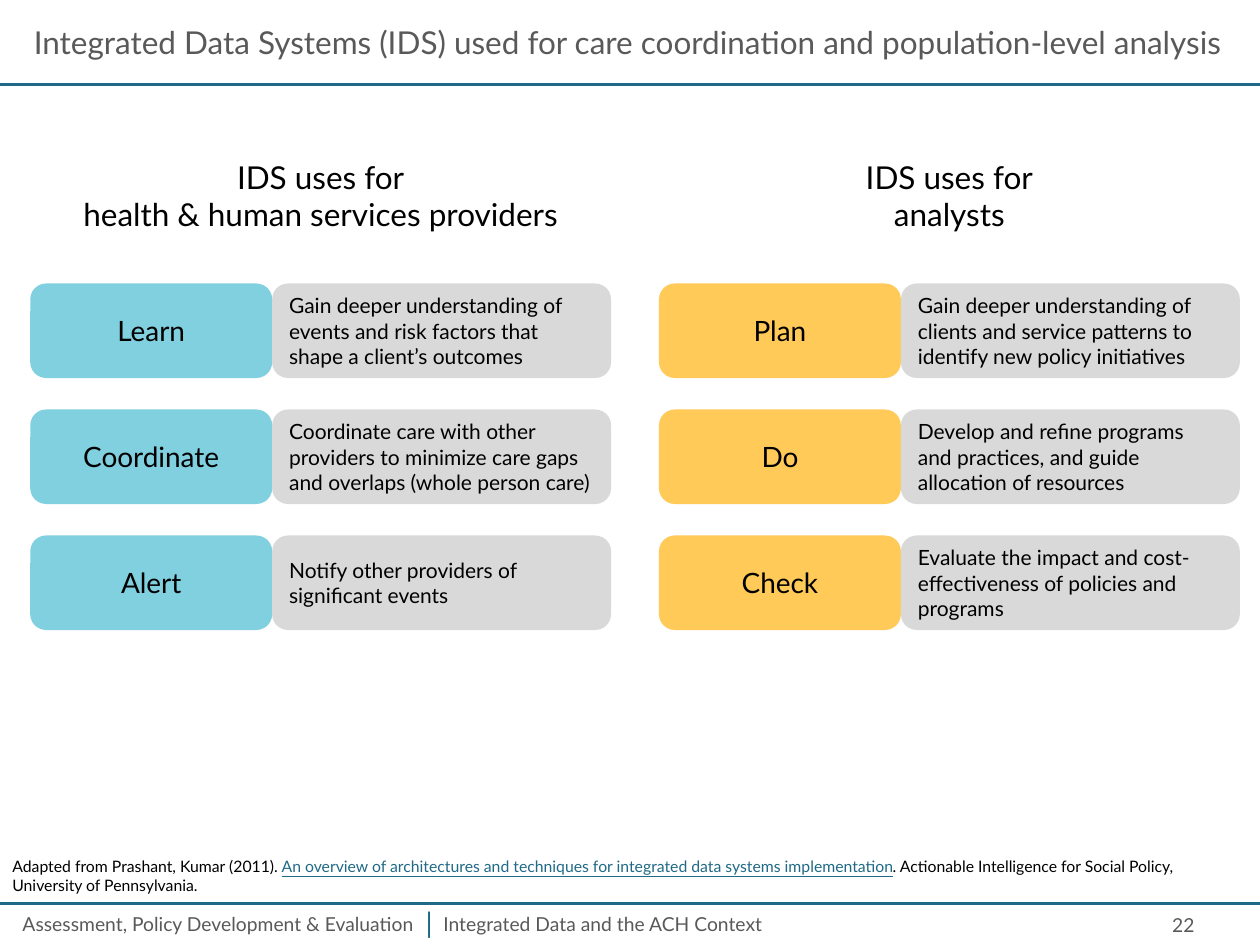
from dataclasses import dataclass

from lxml import etree
from pptx import Presentation
from pptx.dml.color import RGBColor
from pptx.enum import shapes, text
from pptx.oxml import ns
from pptx.util import Inches, Pt


@dataclass(frozen=True)
class Theme:
    font: str = "Lato"
    black: str = "000000"
    grey_text: str = "595959"
    accent: str = "206A87"
    provider: str = "80D0E0"
    analyst: str = "FFCA58"
    detail: str = "D9D9D9"
    heading_size: int = 18
    divider_size: int = 16
    label_size: int = 16
    detail_size: int = 12
    footer_size: int = 11
    source_size: int = 9
    rule_width: float = 1.5


@dataclass(frozen=True)
class Span:
    wording: str
    size: int
    color: str
    underline: bool = False


@dataclass(frozen=True)
class Use:
    label: str
    detail: str


@dataclass(frozen=True)
class Column:
    left: float
    color: str
    heading: tuple[str, ...]
    uses: tuple[Use, ...]


THEME = Theme()
LEFT, CENTER, RIGHT = text.PP_ALIGN.LEFT, text.PP_ALIGN.CENTER, text.PP_ALIGN.RIGHT
TOP, MIDDLE = text.MSO_ANCHOR.TOP, text.MSO_ANCHOR.MIDDLE

# Grid of the two columns, in inches
PAGE_WIDTH, PAGE_HEIGHT = 10, 7.5
HEADING_TOP, HEADING_WIDTH, HEADING_HEIGHT = 1.25, 4.61, 0.61
FIRST_ROW, ROW_STEP, ROW_HEIGHT = 2.25, 1, 0.75
LABEL_WIDTH, DETAIL_WIDTH = 1.92, 2.69

COLUMNS = (
    Column(0.24, THEME.provider, ("IDS uses for", "health & human services providers"), (
        Use("Learn", "Gain deeper understanding of events and risk factors that "
                     "shape a client’s outcomes"),
        Use("Coordinate", "Coordinate care with other providers to minimize care gaps "
                          "and overlaps (whole person care)"),
        Use("Alert", "Notify other providers of significant events"),
    )),
    Column(5.23, THEME.analyst, ("IDS uses for", "analysts"), (
        Use("Plan", "Gain deeper understanding of clients and service patterns to "
                    "identify new policy initiatives"),
        Use("Do", "Develop and refine programs and practices, and guide "
                  "allocation of resources"),
        Use("Check", "Evaluate the impact and cost-effectiveness of policies and programs"),
    )),
)


def write(frame, paragraphs: list[list[Span]], align, anchor) -> None:
    frame.word_wrap = True
    frame.vertical_anchor = anchor
    for index, spans in enumerate(paragraphs):
        para = frame.paragraphs[0] if index == 0 else frame.add_paragraph()
        para.alignment = align
        for span in spans:
            run = para.add_run()
            run.text = span.wording
            run.font.name = THEME.font
            run.font.size = Pt(span.size)
            run.font.color.rgb = RGBColor.from_string(span.color)
            if span.underline:
                run.font.underline = True


def add_text(page, left: float, top: float, width: float, height: float,
             paragraphs: list[list[Span]], align=LEFT, anchor=TOP, inset: bool = True) -> None:
    box = page.shapes.add_textbox(Inches(left), Inches(top), Inches(width), Inches(height))
    frame = box.text_frame
    if not inset:
        frame.margin_left = frame.margin_right = Inches(0)
        frame.margin_top = frame.margin_bottom = Inches(0)
    write(frame, paragraphs, align, anchor)


def add_rule(page, top: float) -> None:
    rule = page.shapes.add_connector(shapes.MSO_CONNECTOR.STRAIGHT, Inches(0), Inches(top),
                                     Inches(PAGE_WIDTH), Inches(top))
    rule.line.color.rgb = RGBColor.from_string(THEME.accent)
    rule.line.width = Pt(THEME.rule_width)
    etree.SubElement(rule._element.spPr, ns.qn("a:effectLst"))


def add_card(group, left: float, top: float, width: float, fill: str,
             span: Span, align) -> None:
    card = group.shapes.add_shape(shapes.MSO_SHAPE.ROUNDED_RECTANGLE, Inches(left), Inches(top),
                                  Inches(width), Inches(ROW_HEIGHT))
    card.shadow.inherit = False
    card.fill.solid()
    card.fill.fore_color.rgb = RGBColor.from_string(fill)
    card.line.fill.background()
    write(card.text_frame, [[span]], align, MIDDLE)


def add_column(page, column: Column) -> None:
    for row, use in enumerate(column.uses):
        top = FIRST_ROW + row * ROW_STEP
        pair = page.shapes.add_group_shape()
        add_card(pair, column.left, top, LABEL_WIDTH, column.color,
                 Span(use.label, THEME.label_size, THEME.black), CENTER)
        add_card(pair, column.left + LABEL_WIDTH, top, DETAIL_WIDTH, THEME.detail,
                 Span(use.detail, THEME.detail_size, THEME.black), LEFT)
    heading = [[Span(line, THEME.heading_size, THEME.black)] for line in column.heading]
    add_text(page, column.left, HEADING_TOP, HEADING_WIDTH, HEADING_HEIGHT,
             heading, CENTER, inset=False)


def add_footer(page) -> None:
    def footer_span(wording: str) -> list[list[Span]]:
        return [[Span(wording, THEME.footer_size, THEME.grey_text)]]

    add_text(page, 0.08, 7.19, 3.58, 0.29,
             footer_span("Assessment, Policy Development & Evaluation"))
    add_rule(page, 7.17)
    add_text(page, 3.42, 7.19, 5.08, 0.29, footer_span("Integrated Data and the ACH Context"))
    add_text(page, 3.24, 7.14, 0.33, 0.37,
             [[Span("|", THEME.divider_size, THEME.accent)]], CENTER)
    add_text(page, 7.25, 7.19, 2.33, 0.3, footer_span("22"), RIGHT, MIDDLE)


def main() -> None:
    deck = Presentation()
    deck.slide_width, deck.slide_height = Inches(PAGE_WIDTH), Inches(PAGE_HEIGHT)
    page = deck.slides.add_slide(deck.slide_layouts[6])

    # Footer and title
    add_footer(page)
    add_rule(page, 0.67)
    title = Span("Integrated Data Systems (IDS) used for care coordination "
                 "and population-level analysis", THEME.heading_size, THEME.grey_text)
    add_text(page, 0.17, 0.17, 9.67, 0.33, [[title]], anchor=MIDDLE)

    # Uses by audience
    for column in COLUMNS:
        add_column(page, column)

    # Source
    add_text(page, 0, 6.75, 9.86, 0.4, [[
        Span("Adapted from Prashant, Kumar (2011). ", THEME.source_size, THEME.black),
        Span("An overview of architectures and techniques for integrated data systems "
             "implementation", THEME.source_size, THEME.accent, underline=True),
        Span(". Actionable Intelligence for Social Policy, University of Pennsylvania.",
             THEME.source_size, THEME.black),
    ]])

    deck.save("out.pptx")


if __name__ == "__main__":
    main()
